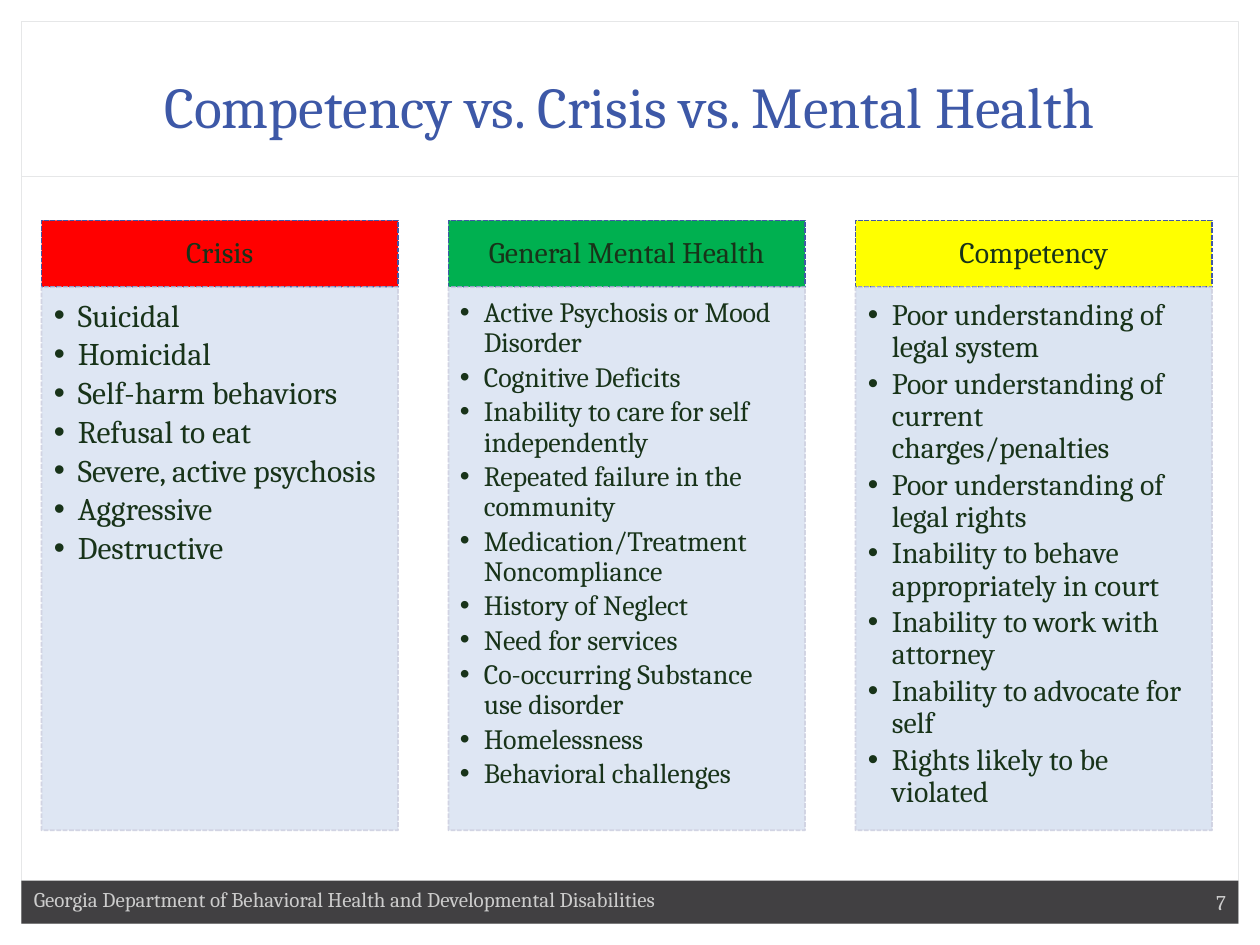
from lxml import etree
from pptx import Presentation
from pptx.dml.color import RGBColor
from pptx.enum.dml import MSO_LINE
from pptx.enum.shapes import MSO_CONNECTOR, MSO_SHAPE
from pptx.enum.text import MSO_ANCHOR, PP_ALIGN
from pptx.oxml.ns import qn
from pptx.util import Inches, Pt

RECT = MSO_SHAPE.RECTANGLE
STRAIGHT = MSO_CONNECTOR.STRAIGHT
DASH = MSO_LINE.SQUARE_DOT
TOP, MIDDLE, BOTTOM = MSO_ANCHOR.TOP, MSO_ANCHOR.MIDDLE, MSO_ANCHOR.BOTTOM
LEFT, CENTER, RIGHT = PP_ALIGN.LEFT, PP_ALIGN.CENTER, PP_ALIGN.RIGHT

BLUE = RGBColor(0x3D, 0x58, 0xA7)
HEADER_LINE = RGBColor(0x42, 0x58, 0xA7)
BODY_FILL = RGBColor(0xDB, 0xE4, 0xF2)
BODY_LINE = RGBColor(0xCF, 0xD1, 0xE1)
DARK_GREEN = RGBColor(0x18, 0x33, 0x19)
RED = RGBColor(0xFF, 0x00, 0x00)
GREEN = RGBColor(0x00, 0xB0, 0x50)
YELLOW = RGBColor(0xFF, 0xFF, 0x00)
CHARCOAL = RGBColor(0x41, 0x40, 0x42)
PALE_GRAY = RGBColor(0xE6, 0xE7, 0xE8)
LIGHT_GRAY = RGBColor(0xCC, 0xCC, 0xCC)

FONT = "Cambria"
WIDTH, HEIGHT = 10, 7.5
MARGIN = 0.17
FOOTER_HEIGHT = 0.34
COLUMN_LEFT, COLUMN_TOP, COLUMN_PITCH = 0.33, 1.75, 3.23
COLUMN_WIDTH, HEADER_HEIGHT, BODY_HEIGHT = 2.83, 0.53, 4.31
INDENT = 0.19

# Heading, header colour, bullet size, body insets, body opacity, bullets
COLUMNS = [
    ("Crisis", RED, 18, (0.1, 0.1, 0.14, 0.16), 90,
     ["Suicidal", "Homicidal", "Self-harm behaviors", "Refusal to eat",
      "Severe, active psychosis", "Aggressive", "Destructive"]),
    ("General Mental Health", GREEN, 16, (0.09, 0.09, 0.12, 0.14), 90,
     ["Active Psychosis or Mood Disorder", "Cognitive Deficits",
      "Inability to care for self independently",
      "Repeated failure in the community",
      "Medication/Treatment Noncompliance", "History of Neglect",
      "Need for services", "Co-occurring Substance use disorder",
      "Homelessness", "Behavioral challenges"]),
    ("Competency", YELLOW, 17, (0.1, 0.1, 0.13, 0.15), 100,
     ["Poor understanding of legal system",
      "Poor understanding of current charges/penalties",
      "Poor understanding of legal rights",
      "Inability to behave appropriately in court",
      "Inability to work with attorney",
      "Inability to advocate for self", "Rights likely to be violated"]),
]


def set_opacity(fmt_xml, percent):
    """Make the solid colour inside a shape's fill or line partly clear."""
    color = fmt_xml.find(qn("a:solidFill"))[0]
    etree.SubElement(color, qn("a:alpha")).set("val", str(percent * 1000))


def add_rect(s, box, fill=None, line=None, width=0.75, dash=None):
    sp = s.shapes.add_shape(RECT, *map(Inches, box))
    sp.shadow.inherit = False
    if fill is None:
        sp.fill.background()
    else:
        sp.fill.solid()
        sp.fill.fore_color.rgb = fill
    if line is None:
        sp.line.fill.background()
    else:
        sp.line.color.rgb = line
        sp.line.width = Pt(width)
        sp.line.dash_style = dash
    return sp


def add_bullet(p):
    pPr = p._p.get_or_add_pPr()
    pPr.set("marL", str(Inches(INDENT)))
    pPr.set("indent", str(-Inches(INDENT)))
    etree.SubElement(pPr, qn("a:buFont")).set("typeface", "Arial")
    etree.SubElement(pPr, qn("a:buChar")).set("char", "•")


def write(sp, lines, size, color, anchor=TOP, align=LEFT,
          insets=(0.1, 0.05, 0.1, 0.05), spacing=None, after=0, bullets=False):
    """Fill a shape with paragraphs; after is a share of the text size."""
    tf = sp.text_frame
    frame = {"word_wrap": True, "vertical_anchor": anchor}
    sides = ("margin_left", "margin_top", "margin_right", "margin_bottom")
    frame.update(zip(sides, map(Inches, insets)))
    for name, value in frame.items():
        setattr(tf, name, value)
    for i, text in enumerate(lines):
        p = tf.paragraphs[0] if i == 0 else tf.add_paragraph()
        layout = {"alignment": align, "line_spacing": spacing,
                  "space_after": Pt(size * after)}
        for name, value in layout.items():
            setattr(p, name, value)
        if bullets:
            add_bullet(p)
        r = p.add_run()
        r.text = text
        for name, value in {"name": FONT, "size": Pt(size)}.items():
            setattr(r.font, name, value)
        r.font.color.rgb = color


def add_frame(s, box):
    """Slide border with the rule below the title."""
    x, y, w, h = box
    add_rect(s, box, line=PALE_GRAY)
    rule = s.shapes.add_connector(
        STRAIGHT, *map(Inches, (x, y + 1.23, x + w, y + 1.23)))
    rule.line.color.rgb = PALE_GRAY
    rule.line.width = Pt(0.75)
    etree.SubElement(rule._element.spPr, qn("a:effectLst"))


def add_footer(s, box):
    """Dark bar with the department at left and the page number at right."""
    x, y, w, h = box
    bar = add_rect(s, box, CHARCOAL)
    write(bar, ["7"], 12, LIGHT_GRAY, MIDDLE, RIGHT)
    label = s.shapes.add_textbox(*map(Inches, (x, y, 6, 0.3)))
    write(label, ["Georgia Department of Behavioral Health and "
                  "Developmental Disabilities"], 12, LIGHT_GRAY)


def add_title(s, box):
    title = s.shapes.add_textbox(*map(Inches, box))
    write(title, ["Competency vs. Crisis vs. Mental Health"], 33, BLUE,
          BOTTOM, CENTER)


def add_column(s, box, heading, color, size, insets, opacity, bullets):
    """Coloured header above a tinted panel of bullets."""
    x, y, w, h = box
    header = add_rect(s, (x, y, w, HEADER_HEIGHT), color, HEADER_LINE, 0.9, DASH)
    write(header, [heading], 17, DARK_GREEN, MIDDLE, CENTER,
          (0.13, 0.08, 0.13, 0.08), 0.9)
    body = add_rect(s, (x, y + HEADER_HEIGHT, w, h - HEADER_HEIGHT),
                    BODY_FILL, BODY_LINE, 0.9, DASH)
    set_opacity(body._element.spPr, opacity)
    set_opacity(body._element.spPr.find(qn("a:ln")), 90)
    write(body, bullets, size, DARK_GREEN, insets=insets, spacing=0.9,
          after=0.15, bullets=True)


def main():
    prs = Presentation()
    prs.slide_width, prs.slide_height = Inches(WIDTH), Inches(HEIGHT)
    s = prs.slides.add_slide(prs.slide_layouts[6])
    inner_width = WIDTH - 2 * MARGIN
    add_frame(s, (MARGIN, MARGIN, inner_width, HEIGHT - 2 * MARGIN))
    add_footer(s, (MARGIN, HEIGHT - MARGIN - FOOTER_HEIGHT,
                   inner_width, FOOTER_HEIGHT))
    add_title(s, (0.33, 0.33, 9.33, 0.83))
    for i, column in enumerate(COLUMNS):
        add_column(s, (COLUMN_LEFT + i * COLUMN_PITCH, COLUMN_TOP,
                       COLUMN_WIDTH, HEADER_HEIGHT + BODY_HEIGHT), *column)
    prs.save("out.pptx")


if __name__ == "__main__":
    main()
